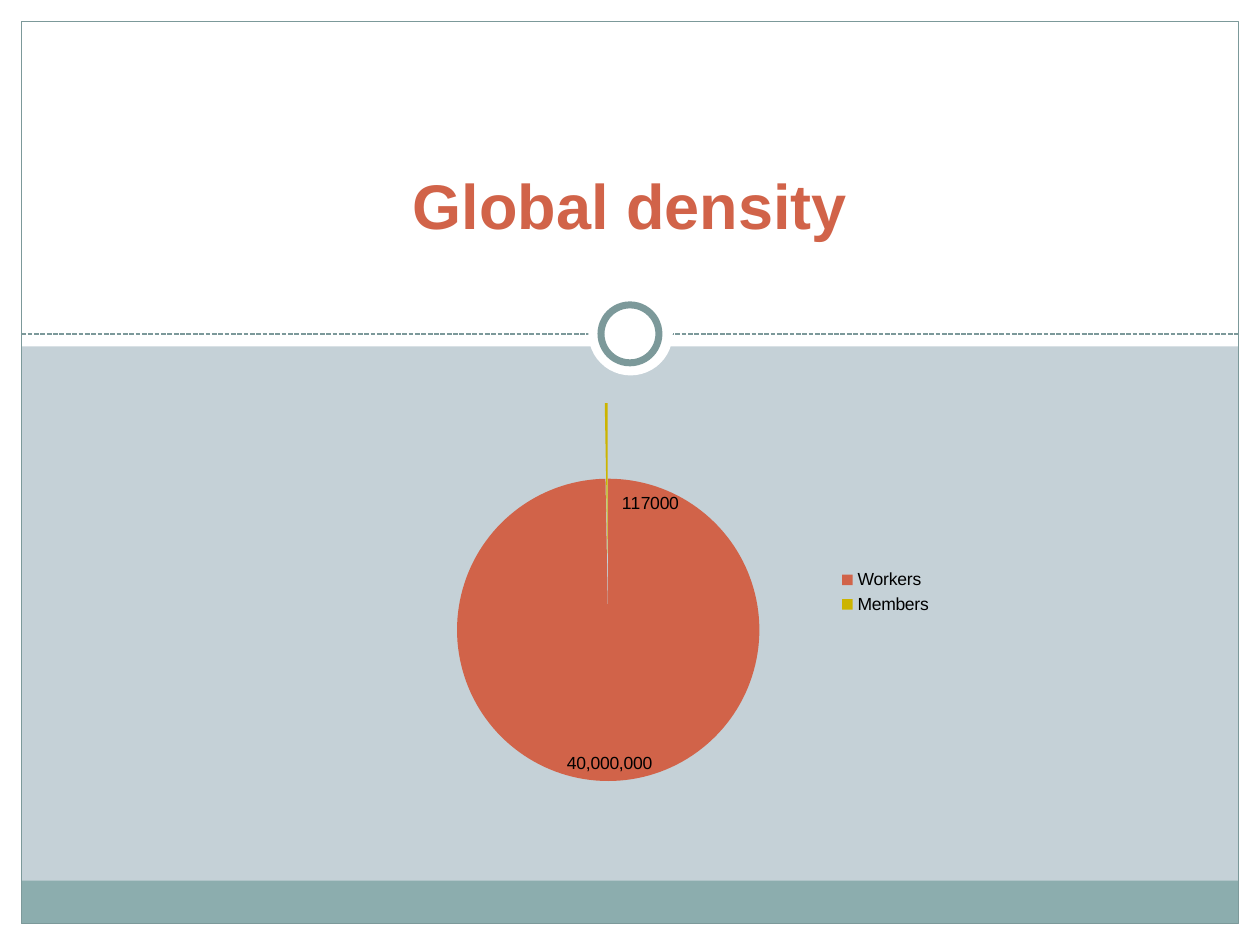
from typing import NamedTuple, Optional

from lxml.etree import SubElement
from pptx import Presentation
from pptx.chart.data import CategoryChartData
from pptx.dml.color import RGBColor
from pptx.enum.chart import XL_CHART_TYPE, XL_LABEL_POSITION, XL_LEGEND_POSITION
from pptx.enum.dml import MSO_LINE
from pptx.enum.shapes import MSO_CONNECTOR, MSO_SHAPE
from pptx.enum.text import MSO_ANCHOR, PP_ALIGN
from pptx.oxml import parse_xml
from pptx.oxml.ns import nsdecls, qn
from pptx.util import Inches, Pt

WHITE, TEAL, ORANGE, BLACK = "FFFFFF", "7C999A", "D16349", "000000"
WIDTH, HEIGHT, MARGIN = 10, 7.5, 0.17


class Panel(NamedTuple):
    left: float
    top: float
    width: float
    height: float
    fill: Optional[str] = None
    line_width: float = 0
    shape: MSO_SHAPE = MSO_SHAPE.RECTANGLE


class Slice(NamedTuple):
    name: str
    value: int
    color: str


PANELS_BELOW_RULE = [
    Panel(0, HEIGHT - MARGIN, WIDTH, MARGIN, WHITE),
    Panel(WIDTH - MARGIN, 0, MARGIN, HEIGHT, WHITE),
    Panel(0, 0, MARGIN, HEIGHT, WHITE),
    Panel(0, 0, WIDTH, 2.75, WHITE),
    Panel(MARGIN, 6.99, WIDTH - 2 * MARGIN, 0.34, "8CADAE"),
]
PANELS_ABOVE_RULE = [
    Panel(MARGIN, MARGIN, WIDTH - 2 * MARGIN, HEIGHT - 2 * MARGIN, None, 0.75),
    Panel(4.67, 2.31, 0.67, 0.67, WHITE, 0, MSO_SHAPE.OVAL),
    Panel(4.77, 2.42, 0.46, 0.46, WHITE, 4, MSO_SHAPE.OVAL),
]
SLICES = [Slice("Workers", 40000000, ORANGE), Slice("Members", 117000, "CCB400")]


def rgb(color: str) -> RGBColor:
    return RGBColor.from_string(color)


def style_font(font, name: str, size: float, color: str, bold: bool = False) -> None:
    font.name, font.size, font.bold = name, Pt(size), bold
    font.color.rgb = rgb(color)


def add_panel(s, panel: Panel) -> None:
    box = (Inches(v) for v in panel[:4])
    sp = s.shapes.add_shape(panel.shape, *box)
    sp.shadow.inherit = False
    if panel.fill:
        sp.fill.solid()
        sp.fill.fore_color.rgb = rgb(panel.fill)
    else:
        sp.fill.background()
    if panel.line_width:
        sp.line.color.rgb = rgb(TEAL)
        sp.line.width = Pt(panel.line_width)
    else:
        sp.line.fill.background()


def add_rule(s, y: float) -> None:
    rule = s.shapes.add_connector(MSO_CONNECTOR.STRAIGHT, Inches(MARGIN), Inches(y),
                                  Inches(WIDTH - MARGIN), Inches(y))
    rule.line.color.rgb = rgb(TEAL)
    rule.line.width = Pt(0.9)
    rule.line.dash_style = MSO_LINE.SQUARE_DOT
    SubElement(rule._element.spPr, qn("a:effectLst"))


def add_title(s, text: str) -> None:
    tf = s.shapes.add_textbox(Inches(0.1), Inches(0.36), Inches(9.8), Inches(1.61)).text_frame
    tf.word_wrap = True
    tf.vertical_anchor = MSO_ANCHOR.BOTTOM
    tf.text = text
    p = tf.paragraphs[0]
    p.alignment = PP_ALIGN.CENTER
    style_font(p.runs[0].font, "Arial", 36, ORANGE, True)


def shift_label(series, index: int, x: float, y: float) -> None:
    """Move a label by fractions of the chart's width and height."""
    label = series.points[index].data_label
    style_font(label.font, "Arial", 10, BLACK)
    label.position = XL_LABEL_POSITION.INSIDE_END
    for idx in series._element.findall(f'{qn("c:dLbls")}/{qn("c:dLbl")}/{qn("c:idx")}'):
        if idx.get("val") == str(index):
            idx.addnext(parse_xml(
                f'<c:layout {nsdecls("c")}><c:manualLayout>'
                f'<c:x val="{x}"/><c:y val="{y}"/></c:manualLayout></c:layout>'))


def add_pie(s, slices: list[Slice]) -> None:
    data = CategoryChartData()
    data.categories = [item.name for item in slices]
    data.add_series("Series 1", [item.value for item in slices])
    chart = s.shapes.add_chart(XL_CHART_TYPE.PIE, Inches(2.5), Inches(3.2),
                               Inches(5), Inches(3), data).chart
    style_font(chart.font, "TeX Gyre Schola", 10, BLACK)
    chart.has_title = False
    chart.has_legend = True
    chart.legend.position = XL_LEGEND_POSITION.RIGHT
    chart.legend.include_in_layout = False
    style_font(chart.legend.font, "Arial", 10, BLACK)

    # Slices and their labels
    plot = chart.plots[0]
    plot.vary_by_categories = True
    series = plot.series[0]
    for i, item in enumerate(slices):
        fill = series.points[i].format.fill
        fill.solid()
        fill.fore_color.rgb = rgb(item.color)
    labels = series.data_labels
    labels.show_value = True
    labels.position = XL_LABEL_POSITION.INSIDE_END
    style_font(labels.font, "Arial", 10, BLACK)
    label = series.points[0].data_label
    label.text_frame.text = f"{slices[0].value:,}"
    style_font(label.text_frame.paragraphs[0].runs[0].font, "Arial", 10, BLACK)
    label.position = XL_LABEL_POSITION.INSIDE_END
    shift_label(series, 1, 0.07, 0.22)

    # Exploded slices
    explosion = parse_xml(f'<c:explosion {nsdecls("c")} val="25"/>')
    series._element.find(qn("c:dPt")).addprevious(explosion)

    # Fixed plot area
    plot_area = chart._chartSpace.chart.plotArea
    for old in plot_area.findall(qn("c:layout")):
        plot_area.remove(old)
    plot_area.insert(0, parse_xml(
        f'<c:layout {nsdecls("c")}><c:manualLayout><c:layoutTarget val="inner"/>'
        '<c:xMode val="edge"/><c:yMode val="edge"/><c:x val="0.11"/><c:y val="0"/>'
        '<c:w val="0.71"/><c:h val="1"/></c:manualLayout></c:layout>'))


def main() -> None:
    prs = Presentation()
    prs.slide_width, prs.slide_height = Inches(WIDTH), Inches(HEIGHT)
    s = prs.slides.add_slide(prs.slide_layouts[6])
    s.background.fill.solid()
    s.background.fill.fore_color.rgb = rgb("C5D1D7")

    # Frame, bands and ring
    for panel in PANELS_BELOW_RULE:
        add_panel(s, panel)
    add_rule(s, 2.65)
    for panel in PANELS_ABOVE_RULE:
        add_panel(s, panel)

    # Content
    add_title(s, "Global density")
    add_pie(s, SLICES)
    prs.save("out.pptx")


if __name__ == "__main__":
    main()
